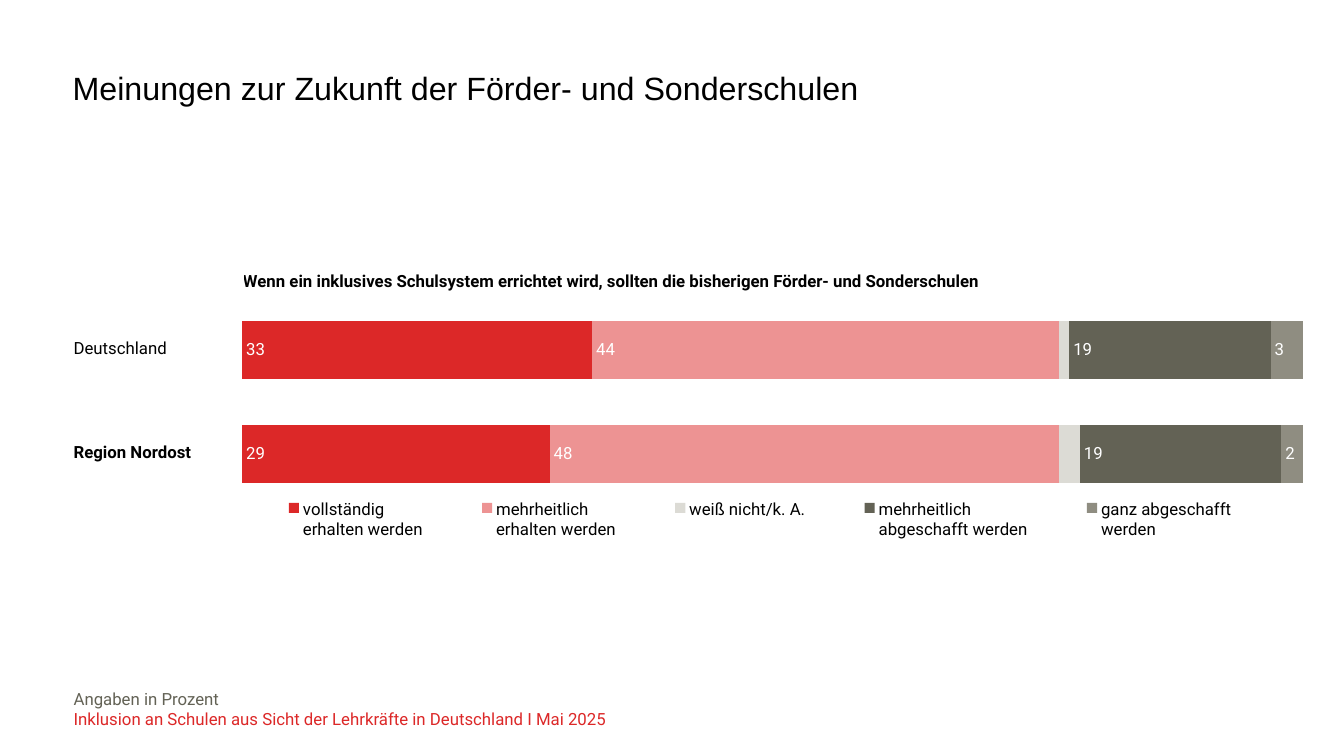
import pptx
import pptx.chart.data
import pptx.dml.color
import pptx.enum.chart
import pptx.enum.text
import pptx.oxml
import pptx.oxml.ns
import pptx.util

Inches = pptx.util.Inches
Anchor = pptx.enum.text.MSO_ANCHOR

TITLE = "Meinungen zur Zukunft der Förder- und Sonderschulen"
QUESTION = "Wenn ein inklusives Schulsystem errichtet wird, sollten die bisherigen Förder- und Sonderschulen"
REGIONS = [("Deutschland", False), ("Region Nordost", True)]
ANSWERS = [
    ("vollständig\nerhalten werden", (33, 29), "DC2828", True),
    ("mehrheitlich\nerhalten werden", (44, 48), "ED9393", True),
    ("weiß nicht/k. A.", (1, 2), "DCDBD5", False),
    ("mehrheitlich\nabgeschafft werden", (19, 19), "636255", True),
    ("ganz abgeschafft\nwerden", (3, 2), "8F8D81", True),
]
FOOTER = [
    ("Angaben in Prozent", "636255", 0.85),
    ("Inklusion an Schulen aus Sicht der Lehrkräfte in Deutschland I Mai 2025", "DC2828", 1.0),
]
PLOT_LAYOUT = (0.091, 0.194, 0.909, 0.456)
LEGEND_LAYOUT = (0.085, 0.62, 0.9, 0.12)


def style_font(font, size=12, color="000000", name="Roboto", bold=False):
    font.size = pptx.util.Pt(size)
    font.name = name
    font.bold = bold
    font.color.rgb = pptx.dml.color.RGBColor.from_string(color)


def write(paragraph, text, spacing=1.0, **font_format):
    paragraph.line_spacing = spacing
    run = paragraph.add_run()
    run.text = text
    style_font(run.font, **font_format)


def add_frame(slide, left, top, width, height, anchor):
    frame = slide.shapes.add_textbox(*map(Inches, (left, top, width, height))).text_frame
    frame.word_wrap = True
    frame.vertical_anchor = anchor
    frame.margin_left = frame.margin_right = frame.margin_top = frame.margin_bottom = 0
    return frame


def add_column(slide, rows, left, top, width, height, anchor, spacing=1.0):
    table = slide.shapes.add_table(len(rows), 1, *map(Inches, (left, top, width, height))).table
    table.first_row = table.horz_banding = False
    for (text, bold), row in zip(rows, table.rows):
        cell = row.cells[0]
        cell.fill.background()
        cell.margin_left = cell.margin_right = cell.margin_top = cell.margin_bottom = 0
        cell.vertical_anchor = anchor
        write(cell.text_frame.paragraphs[0], text, spacing=spacing, bold=bold)


def make_layout(box, inner=False):
    target = '<c:layoutTarget val="inner"/>' if inner else ""
    modes = "".join(f'<c:{side}Mode val="edge"/>' for side in "xy")
    sizes = "".join(f'<c:{side} val="{value}"/>' for side, value in zip("xywh", box))
    return pptx.oxml.parse_xml(
        f'<c:layout {pptx.oxml.ns.nsdecls("c")}><c:manualLayout>'
        f"{target}{modes}{sizes}</c:manualLayout></c:layout>"
    )


def add_opinions(slide):
    data = pptx.chart.data.CategoryChartData()
    data.categories = [str(number + 1) for number in range(len(REGIONS))]
    for answer, values, color, labelled in ANSWERS:
        data.add_series(answer, values)
    chart = slide.shapes.add_chart(
        pptx.enum.chart.XL_CHART_TYPE.BAR_STACKED, *map(Inches, (1.35, 2.08, 11.57, 4.52)), data
    ).chart
    style_font(chart.font)
    chart.has_title = False

    chart.category_axis.visible = chart.value_axis.visible = False
    chart.category_axis.reverse_order = True
    chart.value_axis.has_major_gridlines = False
    chart.value_axis.minimum_scale = 0
    chart.value_axis.maximum_scale = 100
    chart.value_axis.major_unit = 20

    bars = chart.plots[0]
    bars.gap_width = 80
    bars.overlap = 100
    bars.vary_by_categories = False
    for (answer, values, color, labelled), series in zip(ANSWERS, bars.series):
        series.format.fill.solid()
        series.format.fill.fore_color.rgb = pptx.dml.color.RGBColor.from_string(color)
        if labelled:
            labels = series.data_labels
            labels.show_value = True
            labels.position = pptx.enum.chart.XL_LABEL_POSITION.INSIDE_BASE
            style_font(labels.font, color="FFFFFF")

    chart.has_legend = True
    chart.legend.position = pptx.enum.chart.XL_LEGEND_POSITION.BOTTOM
    chart.legend.include_in_layout = False
    style_font(chart.legend.font)
    legend_position = chart.legend._element.find(pptx.oxml.ns.qn("c:legendPos"))
    legend_position.addnext(make_layout(LEGEND_LAYOUT))
    plot_area = chart._chartSpace.chart.plotArea
    for layout in plot_area.findall(pptx.oxml.ns.qn("c:layout")):
        plot_area.remove(layout)
    plot_area.insert(0, make_layout(PLOT_LAYOUT, inner=True))


def main():
    deck = pptx.Presentation()
    deck.slide_width, deck.slide_height = Inches(13.33), Inches(7.5)
    slide = deck.slides.add_slide(deck.slide_layouts[6])

    add_opinions(slide)
    title = add_frame(slide, 0.72, 0.72, 12.21, 0.91, Anchor.TOP)
    write(title.paragraphs[0], TITLE, spacing=0.9, size=23, name="Arial")

    footer = add_frame(slide, 0.73, 6.64, 9.81, 0.59, Anchor.BOTTOM)
    for index, (text, color, spacing) in enumerate(FOOTER):
        paragraph = footer.add_paragraph() if index else footer.paragraphs[0]
        write(paragraph, text, spacing=spacing, color=color)

    add_column(slide, [(QUESTION, True)], 2.41, 2.67, 10.54, 0.22, Anchor.BOTTOM, spacing=0.85)
    add_column(slide, REGIONS, 0.73, 2.94, 1.44, 2.07, Anchor.MIDDLE)
    deck.save("out.pptx")


if __name__ == "__main__":
    main()
